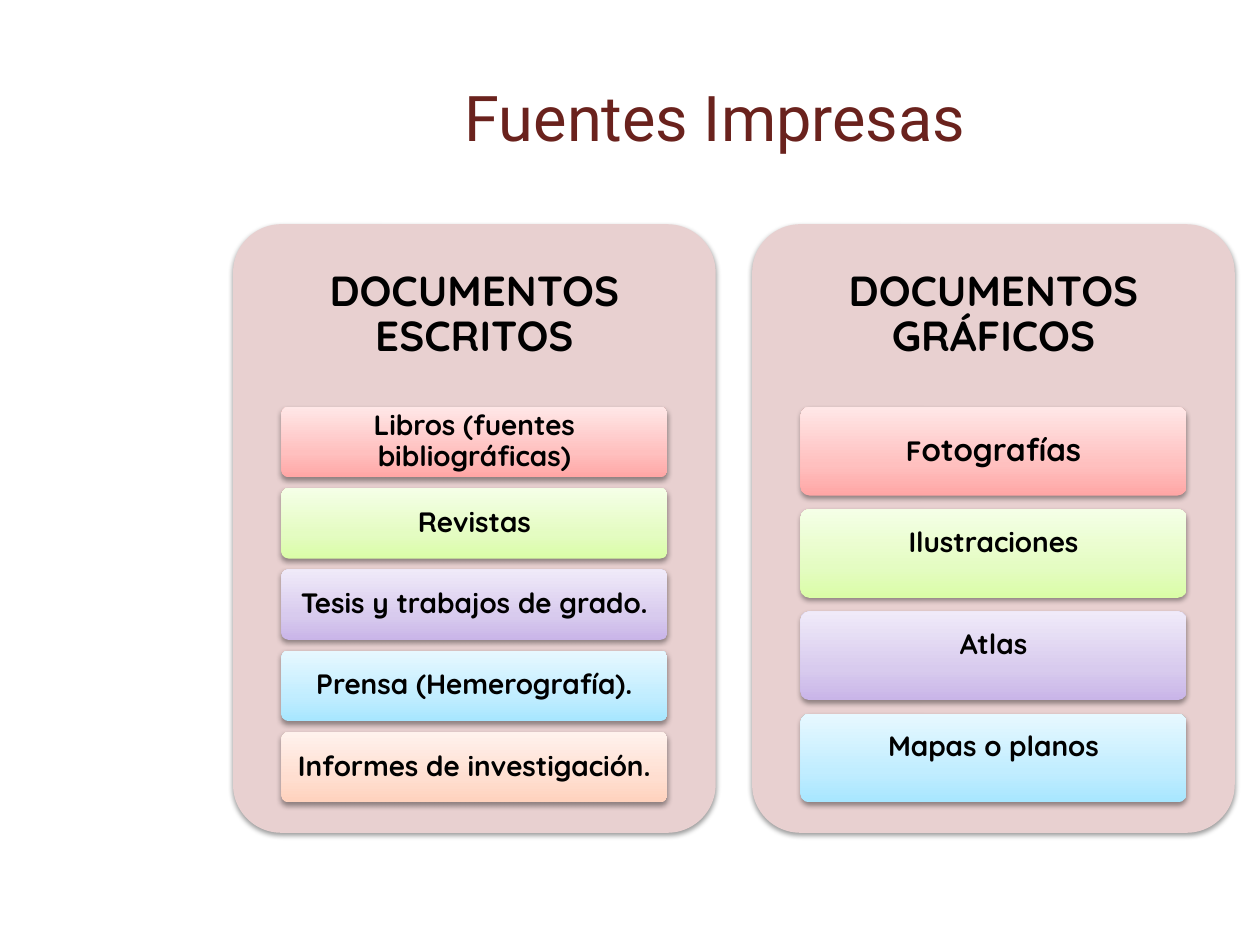
import pptx
import pptx.util
import pptx.oxml
import pptx.dml.color
import pptx.enum.shapes
import pptx.enum.text
import pptx.oxml.ns

Inch, Pt = pptx.util.Inches, pptx.util.Pt
Anchor = pptx.enum.text.MSO_ANCHOR
ROUND = pptx.enum.shapes.MSO_SHAPE.ROUNDED_RECTANGLE
NS = pptx.oxml.ns.nsdecls("a")

# Card tints, from the bottom edge to the top edge
TINTS = [
    ("FFA6A5", "FFC0BF", "FFE7E7"),
    ("DAFDA7", "E4FCC2", "F5FFE7"),
    ("C9B5E8", "D8CBEE", "F0EAF9"),
    ("A7E6FF", "C1EDFF", "E7F8FF"),
    ("FFD2BD", "FFDED0", "FFF2ED"),
]
# Each panel: heading, then cards as (runs, raised)
PANELS = [
    ("DOCUMENTOS ESCRITOS", [
        ([("Libros (fuentes bibliográficas)", 16)], False),
        ([("Revistas", 16)], False),
        ([("Tesis y trabajos de grado.", 16)], False),
        ([("Prensa (Hemerografía).", 16)], False),
        ([("Informes de investigación.", 16)], False),
    ]),
    ("DOCUMENTOS GRÁFICOS", [
        ([("F", 16), ("otografías", 18)], False),
        ([("Ilustraciones", 16)], True),
        ([("Atlas", 16)], True),
        ([("Mapas o planos", 16)], True),
    ]),
]


def write(shape, runs, font, color, bold, pad, anchor=Anchor.MIDDLE, line=0.9):
    """Fill the shape with one centred paragraph of (text, size) runs."""
    frame = shape.text_frame
    frame.word_wrap = True
    frame.vertical_anchor = anchor
    frame.margin_left = frame.margin_right = Inch(pad)
    frame.margin_top = frame.margin_bottom = Inch(pad)
    para = frame.paragraphs[0]
    para.alignment = pptx.enum.text.PP_ALIGN.CENTER
    para.line_spacing = line
    for text, size in runs:
        run = para.add_run()
        run.text = text
        run.font.name, run.font.size, run.font.bold = font, Pt(size), bold
        run.font.color.rgb = pptx.dml.color.RGBColor.from_string(color)


def block(x, y, w, h, tint):
    """Add a rounded block with a soft shadow; tint is one colour or three."""
    shape = slide.shapes.add_shape(ROUND, Inch(x), Inch(y), Inch(w), Inch(h))
    shape.adjustments[0] = 0.1
    shape.line.fill.background()
    shape.fill.solid()
    shape.fill.fore_color.rgb = pptx.dml.color.RGBColor.from_string(tint[0])
    props = shape.fill._xPr
    if len(tint) == 3:
        stops = "".join(
            f'<a:gs pos="{pos}000"><a:srgbClr val="{hue}"/></a:gs>'
            for pos, hue in zip((0, 35, 100), tint))
        solid = props.find(pptx.oxml.ns.qn("a:solidFill"))
        props.replace(solid, pptx.oxml.parse_xml(
            f'<a:gradFill {NS} rotWithShape="1"><a:gsLst>{stops}</a:gsLst>'
            '<a:lin ang="16200000" scaled="0"/></a:gradFill>'))
    props.append(pptx.oxml.parse_xml(
        f'<a:effectLst {NS}><a:outerShdw blurRad="{Pt(3.1)}" dist="{Pt(1.6)}" '
        'dir="5400000" rotWithShape="0"><a:srgbClr val="000000">'
        '<a:alpha val="38000"/></a:srgbClr></a:outerShdw></a:effectLst>'))
    return shape


deck = pptx.Presentation()
deck.slide_width, deck.slide_height = Inch(10), Inch(7.5)
slide = deck.slides.add_slide(deck.slide_layouts[6])

left, top, wide, high = 1.85, 1.78, 3.83, 4.83
step = 4.12               # from one panel to the next
head = 0.3 * high         # heading band
stack = 0.65 * high       # all cards of a panel
gap = 0.154               # between cards, as a share of a card

title = slide.shapes.add_textbox(Inch(left), Inch(0.3), Inch(7.65), Inch(1.25))
write(title, [("Fuentes Impresas", 36)], "Roboto", "6A221D", False, 0.05, line=1)

for col, (name, cards) in enumerate(PANELS):
    x = left + col * step
    block(x, top, wide, high, ["E8D0D0"])
    label = slide.shapes.add_textbox(Inch(x), Inch(top), Inch(wide), Inch(head))
    write(label, [(name, 24)], "Quicksand", "000000", True, 0.1)

    count = len(cards)
    tall = stack / (count + (count - 1) * gap)
    for row, (runs, raised) in enumerate(cards):
        y = top + head + row * tall * (1 + gap)
        card = block(x + wide / 10, y, wide * 0.8, tall, TINTS[row])
        write(card, runs, "Quicksand", "000000", True, 0.02)
        if raised:
            card.text_frame.vertical_anchor = Anchor.TOP
            card.text_frame.margin_top = Inch(0.1)
            card.text_frame.paragraphs[0].line_spacing = 1

deck.save("out.pptx")
